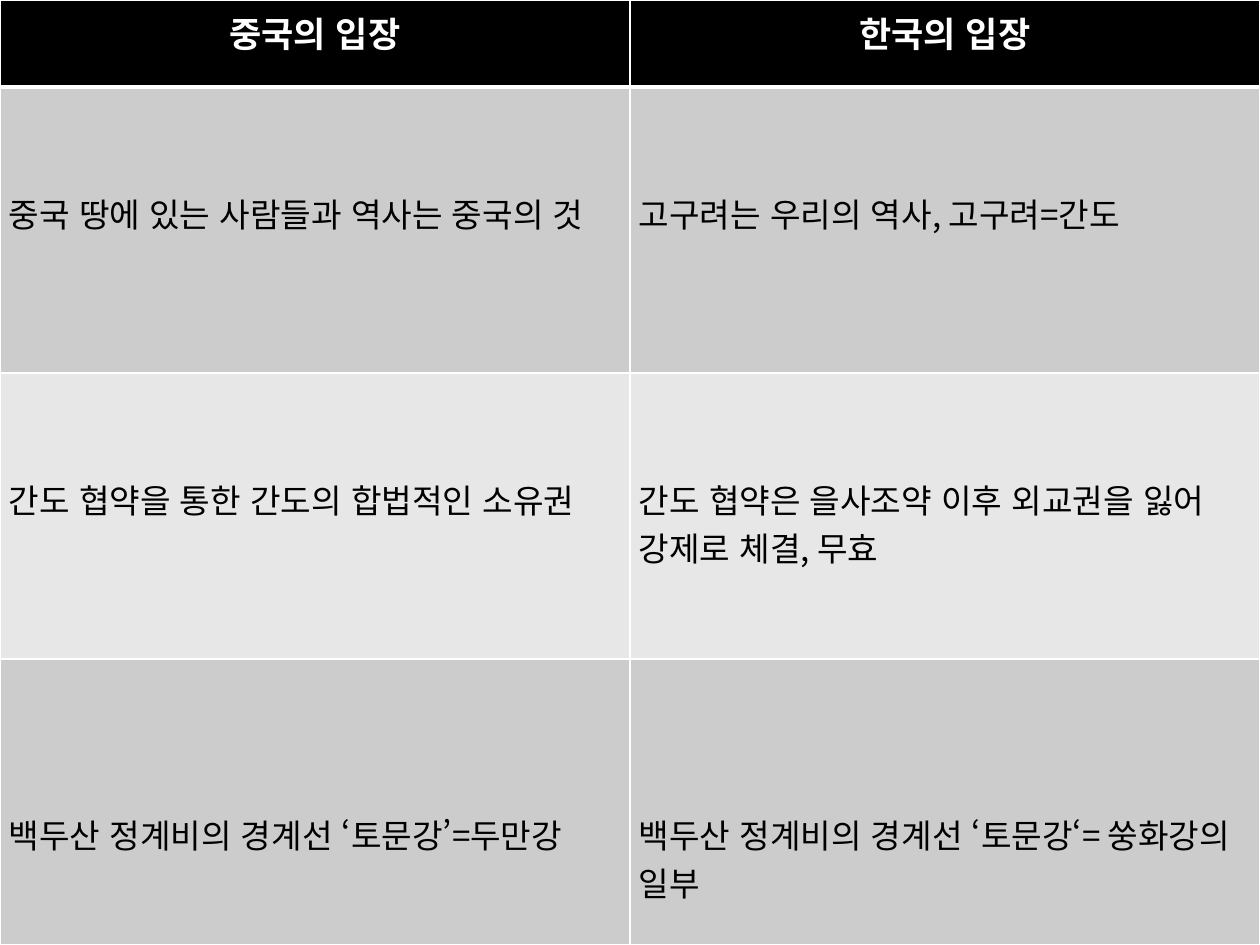
import pptx
import pptx.dml.color
import pptx.enum.lang
import pptx.enum.text
import pptx.oxml
import pptx.oxml.ns
import pptx.util

Inches = pptx.util.Inches
Pt = pptx.util.Pt

COLORS = {
    "header": "000000",
    "header_text": "FFFFFF",
    "odd_row": "CCCCCC",
    "even_row": "E7E7E7",
    "body_text": "000000",
    "border": "FFFFFF",
}
FONT = "Noto Sans CJK KR"
HEADINGS = ["중국의 입장", "한국의 입장"]
POSITIONS = [
    ["중국 땅에 있는 사람들과 역사는 중국의 것", "고구려는 우리의 역사, 고구려=간도"],
    ["간도 협약을 통한 간도의 합법적인 소유권",
     "간도 협약은 을사조약 이후 외교권을 잃어 강제로 체결, 무효"],
    ["백두산 정계비의 경계선 ‘토문강’=두만강",
     "백두산 정계비의 경계선 ‘토문강‘= 쑹화강의 일부"],
]
BODY_TOP_MARGINS = [0.81, 0.81, 1.2]
HEADER_HEIGHT = 0.69


def rgb(name):
    return pptx.dml.color.RGBColor.from_string(COLORS[name])


def add_borders(cell, bottom_width):
    properties = cell._tc.get_or_add_tcPr()
    for side, width in (("L", 1), ("R", 1), ("T", 1), ("B", bottom_width)):
        properties.append(pptx.oxml.parse_xml(
            f'<a:ln{side} {pptx.oxml.ns.nsdecls("a")} w="{Pt(width)}">'
            f'<a:solidFill><a:srgbClr val="{COLORS["border"]}"/></a:solidFill>'
            f'</a:ln{side}>'))


def fill_cell(cell, text, fill, color, size, top=0.05, bold=False,
              align=pptx.enum.text.PP_ALIGN.LEFT, bottom_width=1):
    add_borders(cell, bottom_width)
    cell.fill.solid()
    cell.fill.fore_color.rgb = rgb(fill)
    cell.margin_left = cell.margin_right = Inches(0.07)
    cell.margin_top, cell.margin_bottom = Inches(top), Inches(0.05)
    para = cell.text_frame.paragraphs[0]
    para.alignment = align
    span = para.add_run()
    span.text = text
    span.font.name = FONT
    span.font.size = Pt(size)
    span.font.bold = bold
    span.font.color.rgb = rgb(color)
    span.font.language_id = pptx.enum.lang.MSO_LANGUAGE_ID.KOREAN
    span.font._element.append(pptx.oxml.parse_xml(
        f'<a:ea {pptx.oxml.ns.nsdecls("a")} typeface="{FONT}"/>'))


def add_comparison_table(page, left, top, width, height):
    table = page.shapes.add_table(
        len(POSITIONS) + 1, len(HEADINGS),
        Inches(left), Inches(top), Inches(width), Inches(height)).table
    for column in table.columns:
        column.width = Inches(width / len(HEADINGS))
    body_height = (height - HEADER_HEIGHT) / len(POSITIONS)
    for index, row in enumerate(table.rows):
        row.height = Inches(body_height if index else HEADER_HEIGHT)

    for column, heading in enumerate(HEADINGS):
        fill_cell(table.cell(0, column), heading, "header", "header_text", 20,
                  bold=True, align=pptx.enum.text.PP_ALIGN.CENTER, bottom_width=3)
    for row, (texts, margin) in enumerate(zip(POSITIONS, BODY_TOP_MARGINS), start=1):
        fill = "odd_row" if row % 2 else "even_row"
        for column, text in enumerate(texts):
            fill_cell(table.cell(row, column), text, fill, "body_text", 19, top=margin)


def main():
    deck = pptx.Presentation()
    deck.slide_width, deck.slide_height = Inches(10), Inches(7.5)
    page = deck.slides.add_slide(deck.slide_layouts[6])
    add_comparison_table(page, 0, 0, 10, 7.5)
    deck.save("out.pptx")


if __name__ == "__main__":
    main()
